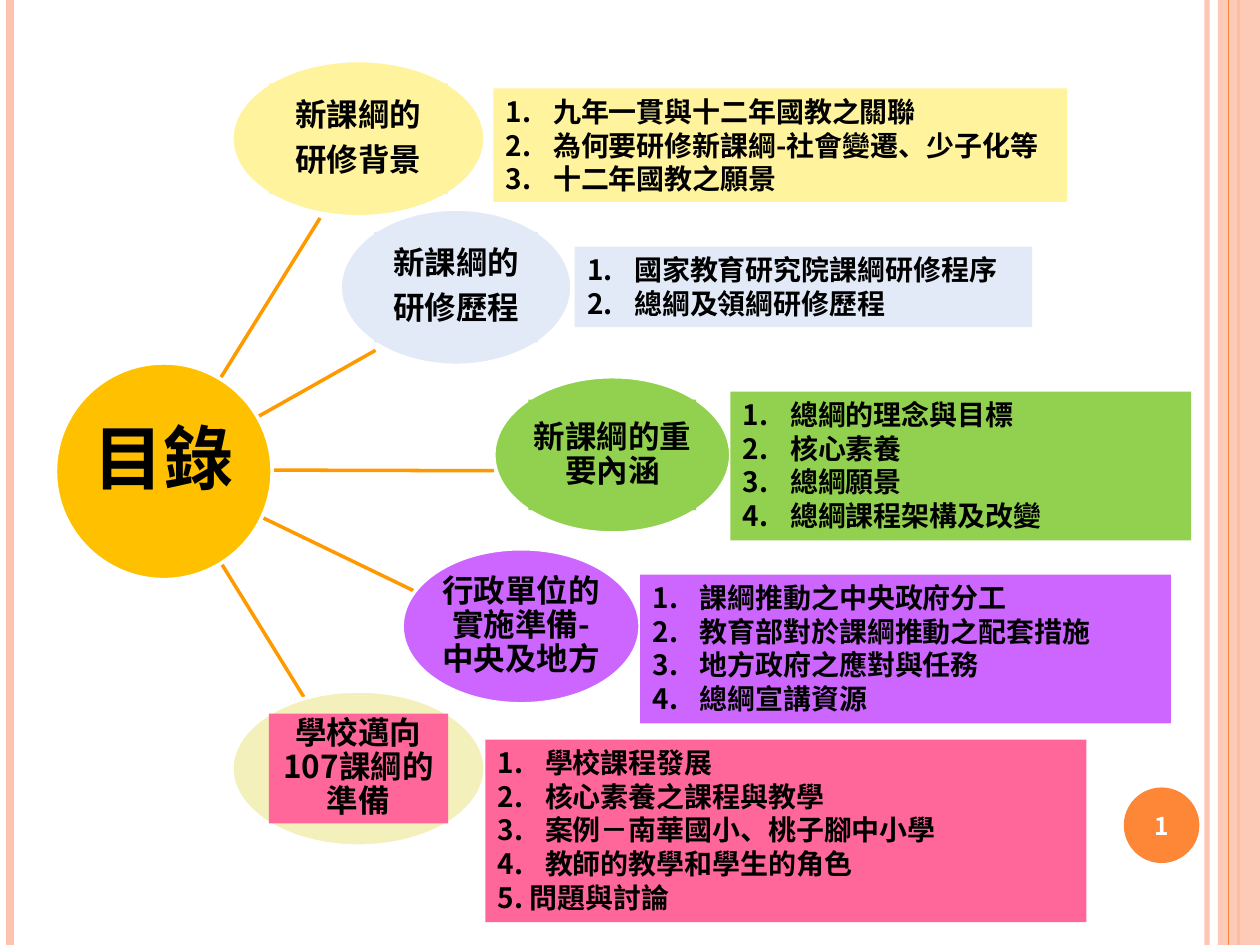
from lxml import etree
from pptx import Presentation
from pptx.dml.color import RGBColor
from pptx.enum import shapes, text
from pptx.oxml.ns import qn
from pptx.util import Pt

FONT = "Noto Sans CJK SC"
WHITE = RGBColor(0xFF, 0xFF, 0xFF)
BLACK = RGBColor(0, 0, 0)
PEACH = RGBColor(0xFE, 0xC3, 0xAE)
ORANGE = RGBColor(0xFE, 0x86, 0x37)
SPOKE = RGBColor(0xFF, 0x99, 0x00)
GOLD = RGBColor(0xFF, 0xC0, 0x00)
YELLOW = RGBColor(0xFF, 0xF3, 0x9D)
PALE_BLUE = RGBColor(0xE3, 0xEA, 0xF7)
GREEN = RGBColor(0x92, 0xD0, 0x50)
PURPLE = RGBColor(0xCC, 0x66, 0xFF)
CREAM = RGBColor(0xF4, 0xF0, 0xBB)
PINK = RGBColor(0xFF, 0x66, 0x99)

RECT, OVAL = shapes.MSO_SHAPE.RECTANGLE, shapes.MSO_SHAPE.OVAL
MIDDLE, TOP = text.MSO_ANCHOR.MIDDLE, text.MSO_ANCHOR.TOP
CENTER, LEFT = text.PP_ALIGN.CENTER, text.PP_ALIGN.LEFT

# Boxes are left, top, width, height in points.
# oval box, oval colour, label colour, label, list box, list colour, list items
TOPICS = [
    ((132.5, 34.6, 144.7, 89.3), YELLOW, YELLOW, "新課綱的\n研修背景",
     (282, 50.6, 327.8, 64.8), YELLOW,
     ["九年一貫與十二年國教之關聯", "為何要研修新課綱-社會變遷、少子化等", "十二年國教之願景"]),
    ((194.4, 119.5, 132.5, 89.3), PALE_BLUE, PALE_BLUE, "新課綱的\n研修歷程",
     (328.4, 141, 261.4, 46), PALE_BLUE,
     ["國家教育研究院課綱研修程序", "總綱及領綱研修歷程"]),
    ((282.2, 215.3, 135.4, 89.3), GREEN, GREEN, "新課綱的重要內涵",
     (417.4, 223.8, 263.3, 85), GREEN,
     ["總綱的理念與目標", "核心素養", "總綱願景", "總綱課程架構及改變"]),
    ((229.8, 313.6, 136, 88.6), PURPLE, None, "行政單位的實施準備-中央及地方",
     (365.8, 328.3, 303.3, 85), PURPLE,
     ["課綱推動之中央政府分工", "教育部對於課綱推動之配套措施", "地方政府之應對與任務", "總綱宣講資源"]),
    ((132.5, 394.9, 144.7, 88.6), CREAM, PINK, "學校邁向107課綱的準備",
     (277.4, 422.6, 343.4, 104.4), PINK,
     ["學校課程發展", "核心素養之課程與教學", "案例－南華國小、桃子腳中小學",
      "教師的教學和學生的角色", "5. 問題與討論"]),
]
SPOKES = [(120.2, 225.4, 182.9, 124.6), (136.8, 244.1, 214.6, 200.2),
          (136.8, 268.6, 282.2, 269), (136.8, 289.4, 247, 342.7),
          (120.2, 311.8, 182.9, 413.3)]


def add_block(slide, kind, box, color, outline=None):
    block = slide.shapes.add_shape(kind, *map(Pt, box))
    block.shadow.inherit = False
    if color is None:
        block.fill.background()
    else:
        block.fill.solid()
        block.fill.fore_color.rgb = color
    if outline is None:
        block.line.fill.background()
    else:
        block.line.color.rgb = outline
        block.line.width = Pt(2)
    return block


def add_line(slide, ends, color, width):
    line = slide.shapes.add_connector(shapes.MSO_CONNECTOR.STRAIGHT, *map(Pt, ends))
    line.line.color.rgb = color
    line.line.width = Pt(width)
    etree.SubElement(line._element.spPr, qn("a:effectLst"))
    return line


def set_opacity(part, percent):
    for color in part._element.spPr.iter(qn("a:srgbClr")):
        etree.SubElement(color, qn("a:alpha"), val=str(percent * 1000))


def write(shape, words, size, color=BLACK, align=CENTER, anchor=MIDDLE, margin=None):
    frame = shape.text_frame
    frame.text = words
    frame.word_wrap = True
    frame.auto_size = text.MSO_AUTO_SIZE.NONE
    frame.vertical_anchor = anchor
    if margin is not None:
        frame.margin_left = frame.margin_right = Pt(margin)
        frame.margin_top = frame.margin_bottom = Pt(margin)
    for paragraph in frame.paragraphs:
        paragraph.alignment = align
        for run in paragraph.runs:
            run.font.size = Pt(size)
            run.font.bold = True
            run.font.color.rgb = color
            run.font.name = FONT
            etree.SubElement(run.font._element, qn("a:ea"), typeface=FONT)
    return frame


def add_frame(slide, width, height):
    """Draw the stripes along both edges and the page number."""
    def stripe(x, color, weight):
        return add_line(slide, (x, 0, x, height), color, weight)

    set_opacity(stripe(width - 30.2, PEACH, 3), 93)
    stripe(5.8, PEACH, 4.5)
    stripe(width - 12.2, ORANGE, 1.5)
    set_opacity(add_block(slide, RECT, (width - 24, 0, 24, height), PEACH), 87)
    stripe(width - 18, ORANGE, 0.75)
    badge = add_block(slide, OVAL, (width - 77.8, height - 90, 43.2, 43.2), ORANGE)
    write(badge, "1", 14, WHITE)


def add_hub(slide, box):
    left, top, width, height = box
    add_block(slide, OVAL, box, GOLD, WHITE)
    title = slide.shapes.title
    title.left, title.top = Pt(left + 8.6), Pt(top + 25.9)
    title.width, title.height = Pt(width - 18), Pt(55.4)
    write(title, "目錄", 40, anchor=TOP)
    slide.shapes._spTree.append(title._element)  # in front of the circle


def add_topic(slide, box, color, label_color, label):
    left, top, width, height = box
    add_block(slide, OVAL, box, color, WHITE)
    inset_x, inset_y = width * 0.146, height * 0.146
    inner = (left + inset_x, top + inset_y, width - 2 * inset_x, height - 2 * inset_y)
    frame = write(add_block(slide, RECT, inner, label_color), label, 18, margin=0.9)
    for paragraph in frame.paragraphs:
        paragraph.line_spacing = 0.9
        paragraph.space_after = Pt(6.3)


def add_list(slide, box, color, items):
    """Number the items, except one that already carries its number."""
    frame = write(add_block(slide, RECT, box, color), "\n".join(items), 16,
                  align=LEFT, anchor=TOP)
    for paragraph, item in zip(frame.paragraphs, items):
        if not item[0].isdigit():
            props = paragraph._p.get_or_add_pPr()
            props.set("marL", str(Pt(27)))
            props.set("indent", str(-Pt(27)))
            etree.SubElement(props, qn("a:buFont"), typeface=FONT)
            etree.SubElement(props, qn("a:buAutoNum"), type="arabicPeriod")


def main():
    deck = Presentation()
    deck.slide_width, deck.slide_height = Pt(720), Pt(540)
    slide = deck.slides.add_slide(deck.slide_layouts[5])
    add_frame(slide, 720, 540)
    for ends in SPOKES:
        add_line(slide, ends, SPOKE, 2)
    add_hub(slide, (31.7, 207.4, 123.8, 123.8))
    for *topic, _, _, _ in TOPICS:
        add_topic(slide, *topic)
    for *_, box, color, items in TOPICS:
        add_list(slide, box, color, items)
    deck.save("out.pptx")


if __name__ == "__main__":
    main()
